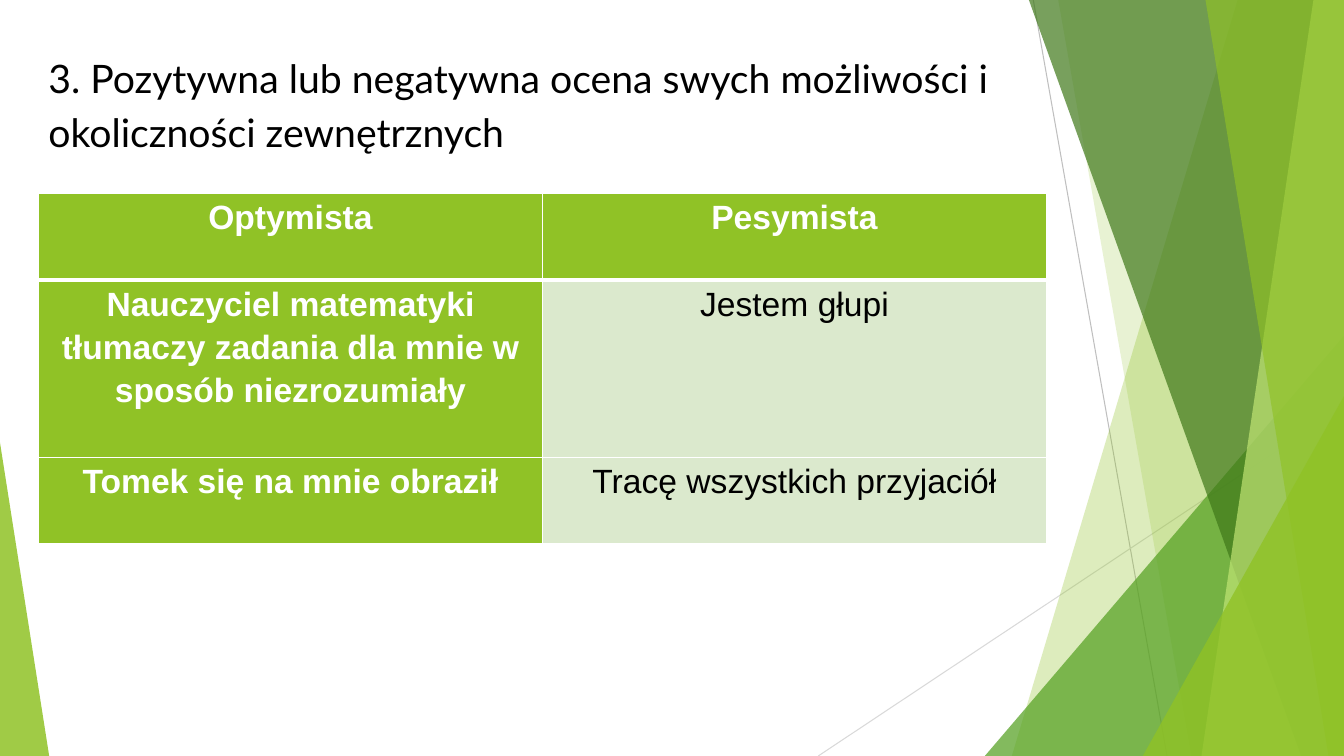
"""Build the slide that sets an optimist's view beside a pessimist's."""
import dataclasses

import pptx
import pptx.dml.color
import pptx.enum.shapes
import pptx.enum.text
import pptx.oxml
import pptx.oxml.ns
import pptx.util

Cm = pptx.util.Cm
Pt = pptx.util.Pt
WIDE, HIGH = 33.87, 19.05


@dataclasses.dataclass(frozen=True)
class Theme:
    lime: str = "90C226"
    green: str = "54A021"
    dark: str = "3F7819"
    light: str = "C0E474"
    pale: str = "DBE9CD"
    white: str = "FFFFFF"
    black: str = "000000"
    gray: str = "BFBFBF"
    mist: str = "D9D9D9"
    head: str = "Lato"
    body: str = "Arial"
    large: int = 28
    small: int = 24
    lead: float = 1.15


THEME = Theme()

ROWS = [
    ("Optymista", "Pesymista"),
    ("Nauczyciel matematyki tłumaczy zadania dla mnie w sposób niezrozumiały",
     "Jestem głupi"),
    ("Tomek się na mnie obraził", "Tracę wszystkich przyjaciół"),
]


def tint(code):
    return pptx.dml.color.RGBColor.from_string(code)


def paint(shape, code, alpha):
    shape.shadow.inherit = False
    shape.line.fill.background()
    shape.fill.solid()
    shape.fill.fore_color.rgb = tint(code)
    node = shape.fill._xPr.find(".//" + pptx.oxml.ns.qn("a:srgbClr"))
    node.append(pptx.oxml.parse_xml(
        f'<a:alpha {pptx.oxml.ns.nsdecls("a")} val="{alpha * 1000}"/>'))


def add_line(slide, start, end, code):
    line = slide.shapes.add_connector(
        pptx.enum.shapes.MSO_CONNECTOR.STRAIGHT,
        *(Cm(n) for n in (*start, *end)))
    line.line.color.rgb = tint(code)
    line.line.width = Pt(0.75)
    line._element.spPr.append(pptx.oxml.parse_xml(
        f'<a:effectLst {pptx.oxml.ns.nsdecls("a")}/>'))


def add_band(slide, top, base, code, alpha):
    pen = slide.shapes.build_freeform(Cm(top), 0)
    pen.add_line_segments([(Cm(WIDE), 0), (Cm(WIDE), Cm(HIGH)),
                           (Cm(base), Cm(HIGH))])
    paint(pen.convert_to_shape(), code, alpha)


def add_peak(slide, left, top, width, tip, code, alpha):
    peak = slide.shapes.add_shape(
        pptx.enum.shapes.MSO_SHAPE.ISOSCELES_TRIANGLE,
        Cm(left), Cm(top), Cm(width), Cm(HIGH - top))
    peak.adjustments[0] = tip
    paint(peak, code, alpha)


def style(para, font, size, code, bold=False):
    para.line_spacing = THEME.lead
    for run in para.runs:
        run.font.name = font
        run.font.size = Pt(size)
        run.font.bold = bold
        run.font.color.rgb = tint(code)


def add_title(slide, text):
    box = slide.shapes.add_textbox(Cm(0.97), Cm(1.07), Cm(25.4), Cm(4.27))
    frame = box.text_frame
    frame.word_wrap = True
    frame.auto_size = pptx.enum.text.MSO_AUTO_SIZE.SHAPE_TO_FIT_TEXT
    frame.text = text
    style(frame.paragraphs[0], THEME.head, THEME.large, THEME.black)


def edge(cell, side, width):
    cell._tc.get_or_add_tcPr().append(pptx.oxml.parse_xml(
        f'<a:ln{side} {pptx.oxml.ns.nsdecls("a")} w="{Pt(width)}">'
        f'<a:solidFill><a:srgbClr val="{THEME.white}"/></a:solidFill>'
        f'</a:ln{side}>'))


def fill_cell(cell, text, row, col):
    strong = row == 0 or col == 0
    for side in "LRTB":
        thick = (row, side) in ((0, "B"), (1, "T"))
        edge(cell, side, 3 if thick else 1)
    cell.fill.solid()
    cell.fill.fore_color.rgb = tint(THEME.lime if strong else THEME.pale)
    cell.margin_left = cell.margin_right = Cm(0.18)
    cell.margin_top = cell.margin_bottom = 0
    cell.text_frame.text = text
    para = cell.text_frame.paragraphs[0]
    para.alignment = pptx.enum.text.PP_ALIGN.CENTER
    style(para, THEME.body, THEME.small,
          THEME.white if strong else THEME.black, strong)


def add_grid(slide, rows, highs):
    grid = slide.shapes.add_table(
        len(rows), len(rows[0]), Cm(0.97), Cm(4.88), Cm(25.4),
        Cm(sum(highs))).table
    grid.horz_banding = False
    for r, (texts, high) in enumerate(zip(rows, highs)):
        grid.rows[r].height = Cm(high)
        for c, text in enumerate(texts):
            fill_cell(grid.cell(r, c), text, r, c)


def add_decor(slide):
    add_line(slide, (26.04, 0), (29.41, HIGH), THEME.gray)
    add_line(slide, (WIDE, 10.24), (20.62, HIGH), THEME.mist)
    add_band(slide, 31.19, 25.5, THEME.lime, 30)
    add_band(slide, 26.67, 30.02, THEME.lime, 20)
    add_peak(slide, 24.82, 8.46, 9.05, 1, THEME.green, 72)
    add_band(slide, 25.93, 32.79, THEME.dark, 70)
    add_band(slide, 33.1, 30.28, THEME.light, 70)
    add_band(slide, 30.38, 33.48, THEME.lime, 65)
    add_peak(slide, 28.8, 9.98, 5.07, 1, THEME.lime, 80)
    add_peak(slide, 0, 11.15, 1.24, 0, THEME.lime, 85)


def main():
    deck = pptx.Presentation()
    deck.slide_width, deck.slide_height = Cm(WIDE), Cm(HIGH)
    slide = deck.slides.add_slide(deck.slide_layouts[6])
    add_decor(slide)
    add_title(slide, "3. Pozytywna lub negatywna ocena swych możliwości i "
                     "okoliczności zewnętrznych")
    add_grid(slide, ROWS, (2.18, 4.46, 2.18))
    deck.save("out.pptx")


if __name__ == "__main__":
    main()
